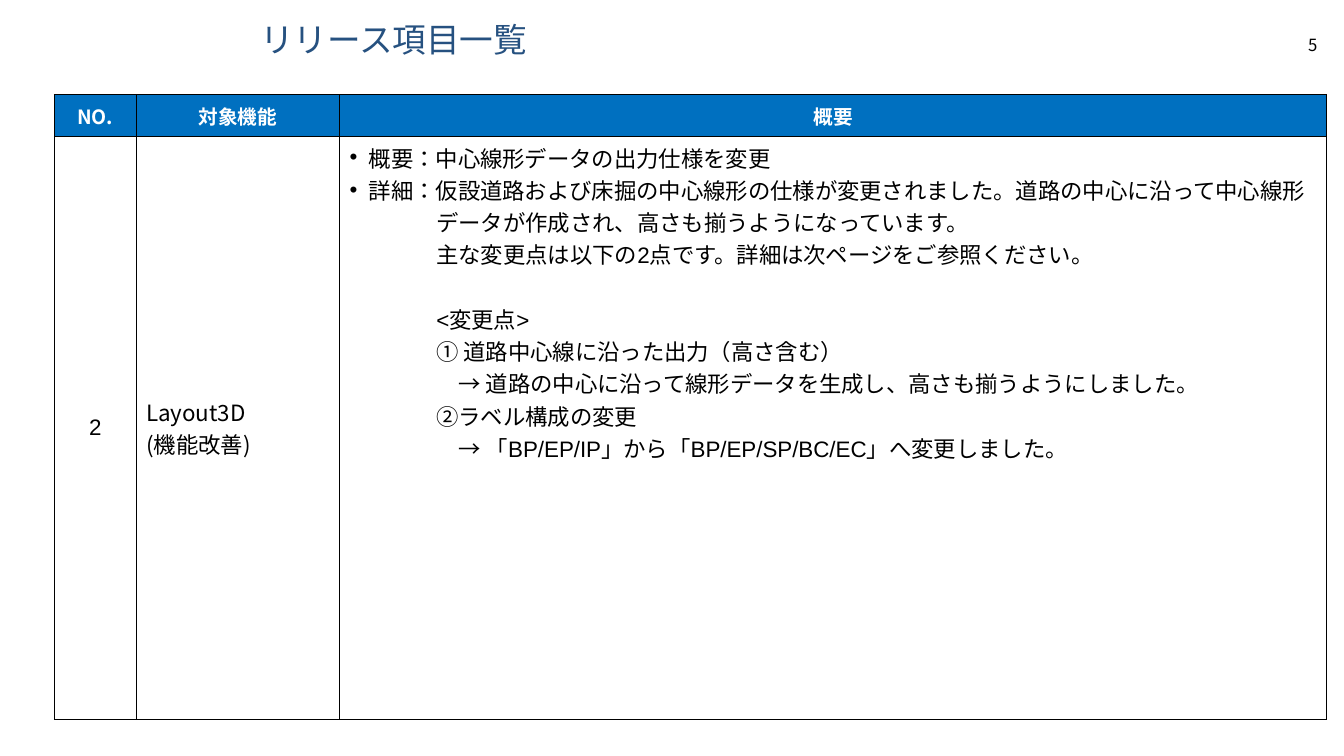
from dataclasses import dataclass

import pptx
import pptx.dml.color
import pptx.enum.lang
import pptx.enum.text
import pptx.oxml
import pptx.oxml.ns
import pptx.util
from pptx.util import Cm, Pt

ALIGN = pptx.enum.text.PP_ALIGN
ANCHOR = pptx.enum.text.MSO_ANCHOR


@dataclass(frozen=True)
class Theme:
    latin: str = "Arial"
    japanese: str = "Noto Sans CJK JP"
    title_color: str = "265180"
    header_fill: str = "0070C0"
    body_fill: str = "FFFFFF"
    header_text: str = "FFFFFF"
    text: str = "000000"
    border: str = "000000"
    title_size: int = 24
    header_size: int = 14
    body_size: int = 16
    number_size: int = 12


THEME = Theme()
BULLET_INDENT = Cm(0.48)
DETAIL_INDENT = Cm(2.18)
ARROW_INDENT = Cm(2.74)

COLUMN_WIDTHS = (Cm(2.06), Cm(5.13), Cm(24.87))
ROW_HEIGHTS = (Cm(1.04), Cm(14.71))
HEADERS = (("NO.", THEME.japanese), ("対象機能", THEME.japanese), ("概要", THEME.latin))
FEATURE_LINES = ("Layout3D", "(機能改善)")
BULLET = {"bullet": True, "indent": BULLET_INDENT}
DETAIL = {"indent": DETAIL_INDENT}
ARROW = {"indent": ARROW_INDENT}
SUMMARY_LINES = (
    ("概要：中心線形データの出力仕様を変更", BULLET),
    ("詳細：仮設道路および床掘の中心線形の仕様が変更されました。道路の中心に沿って中心線形", BULLET),
    ("データが作成され、高さも揃うようになっています。", DETAIL),
    ("主な変更点は以下の2点です。詳細は次ページをご参照ください。", DETAIL),
    ("<変更点>", {"indent": DETAIL_INDENT, "space_before": Pt(23)}),
    ("① 道路中心線に沿った出力（高さ含む）", DETAIL),
    ("→ 道路の中心に沿って線形データを生成し、高さも揃うようにしました。", ARROW),
    ("➁ラベル構成の変更", DETAIL),
    ("→ 「BP/EP/IP」から「BP/EP/SP/BC/EC」へ変更しました。", ARROW),
)


def rgb(value):
    return pptx.dml.color.RGBColor.from_string(value)


def xml(tag, **attributes):
    element = pptx.oxml.parse_xml(f"<{tag} {pptx.oxml.ns.nsdecls('a')}/>")
    for name, value in attributes.items():
        element.set(name, str(value))
    return element


def apply_format(target, values):
    for name, value in values.items():
        setattr(target, name, value)


def write_run(paragraph, text, size, color, font=THEME.latin, bold=False):
    run = paragraph.add_run()
    run.text = text
    apply_format(run.font, {
        "name": font,
        "size": Pt(size),
        "bold": bold,
        "language_id": pptx.enum.lang.MSO_LANGUAGE_ID.JAPANESE,
    })
    run.font.color.rgb = rgb(color)
    latin = run.font._element.find(pptx.oxml.ns.qn("a:latin"))
    latin.addnext(xml("a:ea", typeface=THEME.japanese))


def set_indent(paragraph, indent, bullet=False):
    properties = paragraph._p.get_or_add_pPr()
    properties.set("marL", str(indent))
    properties.set("indent", str(-indent if bullet else 0))
    if bullet:
        properties.append(xml("a:buFont", typeface=THEME.latin))
        properties.append(xml("a:buChar", char="•"))


def style_cell(cell, fill):
    cell_properties = cell._tc.get_or_add_tcPr()
    for side in ("lnL", "lnR", "lnT", "lnB"):
        line = xml(f"a:{side}", w=Pt(1))
        solid = xml("a:solidFill")
        solid.append(xml("a:srgbClr", val=THEME.border))
        line.append(solid)
        cell_properties.append(line)
    cell.fill.solid()
    cell.fill.fore_color.rgb = rgb(fill)


def add_title(slide, text):
    title = slide.shapes.title
    apply_format(title, {"left": Cm(6.3), "top": Cm(0.51), "width": Cm(22.66), "height": Cm(1.07)})
    apply_format(title.text_frame, {
        "vertical_anchor": ANCHOR.MIDDLE,
        "word_wrap": True,
        "auto_size": pptx.enum.text.MSO_AUTO_SIZE.NONE,
    })
    paragraph = title.text_frame.paragraphs[0]
    apply_format(paragraph, {"alignment": ALIGN.LEFT, "line_spacing": 0.9})
    write_run(paragraph, text, THEME.title_size, THEME.title_color)


def add_page_number(slide, number):
    box = slide.shapes.add_textbox(Cm(31.7), Cm(0.76), Cm(1.75), Cm(0.76))
    box.text_frame.word_wrap = True
    paragraph = box.text_frame.paragraphs[0]
    paragraph.alignment = ALIGN.RIGHT
    write_run(paragraph, number, THEME.number_size, THEME.text, THEME.japanese)


def add_release_table(slide):
    frame = slide.shapes.add_table(
        len(ROW_HEIGHTS), len(COLUMN_WIDTHS), Cm(1.37), Cm(2.39), sum(COLUMN_WIDTHS), sum(ROW_HEIGHTS))
    table = frame.table
    for column, width in zip(table.columns, COLUMN_WIDTHS):
        column.width = width
    for row, height, fill in zip(table.rows, ROW_HEIGHTS, (THEME.header_fill, THEME.body_fill)):
        row.height = height
        for cell in row.cells:
            style_cell(cell, fill)
            cell.vertical_anchor = ANCHOR.MIDDLE
    return table


def fill_header(table):
    for cell, (text, font) in zip(table.rows[0].cells, HEADERS):
        paragraph = cell.text_frame.paragraphs[0]
        paragraph.alignment = ALIGN.CENTER
        write_run(paragraph, text, THEME.header_size, THEME.header_text, font, bold=True)


def fill_lines(cell, lines, font=THEME.latin):
    """Write (text, layout) pairs, one paragraph each."""
    frame = cell.text_frame
    for index, (text, layout) in enumerate(lines):
        paragraph = frame.add_paragraph() if index else frame.paragraphs[0]
        if "space_before" in layout:
            paragraph.space_before = layout["space_before"]
        if "alignment" in layout:
            paragraph.alignment = layout["alignment"]
        set_indent(paragraph, layout.get("indent", 0), layout.get("bullet", False))
        write_run(paragraph, text, THEME.body_size, THEME.text, font)


def main():
    presentation = pptx.Presentation()
    apply_format(presentation, {"slide_width": Cm(33.87), "slide_height": Cm(19.05)})
    slide = presentation.slides.add_slide(presentation.slide_layouts.get_by_name("Title Only"))
    add_title(slide, "リリース項目一覧")
    add_page_number(slide, "5")
    table = add_release_table(slide)
    fill_header(table)
    number_cell, feature_cell, summary_cell = table.rows[1].cells
    fill_lines(number_cell, [("2", {"alignment": ALIGN.CENTER})])
    fill_lines(feature_cell, [(line, {}) for line in FEATURE_LINES], THEME.japanese)
    summary_cell.vertical_anchor = ANCHOR.TOP
    fill_lines(summary_cell, SUMMARY_LINES)
    presentation.save("out.pptx")


if __name__ == "__main__":
    main()
